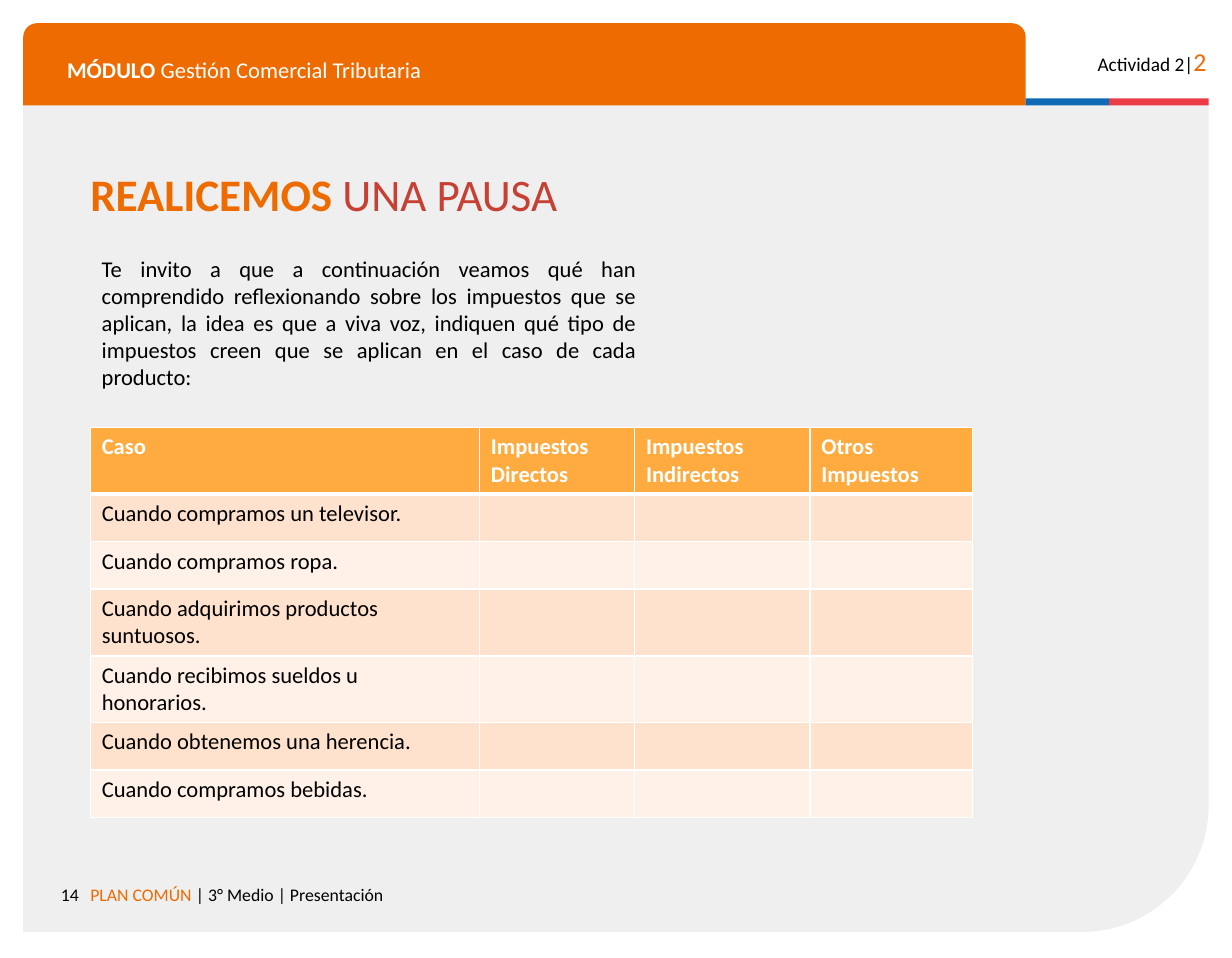
from dataclasses import dataclass

import lxml.etree
import pptx
import pptx.dml.color
import pptx.enum.shapes
import pptx.enum.text
import pptx.oxml.ns
import pptx.util

Cm = pptx.util.Cm
Preset = pptx.enum.shapes.MSO_SHAPE
Align = pptx.enum.text.PP_ALIGN
Anchor = pptx.enum.text.MSO_ANCHOR


@dataclass(frozen=True)
class Theme:
    font: str = "Calibri"
    orange: str = "ED6B00"
    blue: str = "0F69B4"
    red: str = "EB3C46"
    brick: str = "C64033"
    panel: str = "EFEFEF"
    table_header: str = "FFAB40"
    bands: tuple[str, str] = ("FFE2CD", "FFF1E8")
    black: str = "000000"
    white: str = "FFFFFF"
    title_size: int = 28
    accent_size: int = 16
    body_size: int = 14
    label_size: int = 12
    footer_size: int = 11


@dataclass(frozen=True)
class Box:
    left: float
    top: float
    width: float
    height: float

    def lengths(self) -> tuple[int, int, int, int]:
        return Cm(self.left), Cm(self.top), Cm(self.width), Cm(self.height)


@dataclass(frozen=True)
class Block:
    box: Box
    preset: int
    color: str
    adjustments: tuple[float, ...] = ()
    flipped: bool = False


@dataclass(frozen=True)
class Run:
    text: str
    size: int
    color: str
    bold: bool = False


@dataclass(frozen=True)
class Label:
    box: Box
    runs: tuple[Run, ...]
    alignment: int = Align.LEFT
    vertical_margin: float = 0.25


THEME = Theme()

BLOCKS = (
    Block(Box(0.51, 2.29, 25.98, 18.14), Preset.ROUND_1_RECTANGLE, THEME.panel, (0.153,), True),
    Block(Box(0.51, 0.51, 21.97, 1.8), Preset.ROUND_2_SAME_RECTANGLE, THEME.orange, (0.167, 0)),
    Block(Box(22.48, 2.16, 1.83, 0.15), Preset.RECTANGLE, THEME.blue),
    Block(Box(24.31, 2.16, 2.18, 0.15), Preset.RECTANGLE, THEME.red),
)

TITLE = Label(
    Box(1.73, 3.91, 24.87, 0.89),
    (
        Run("REALICEMOS ", THEME.title_size, THEME.orange, True),
        Run("UNA PAUSA", THEME.title_size, THEME.brick),
    ),
)

LABELS = (
    Label(
        Box(1.22, 0.97, 20.68, 0.89),
        (
            Run("MÓDULO", THEME.body_size, THEME.white, True),
            Run(" Gestión Comercial Tributaria", THEME.body_size, THEME.white),
        ),
    ),
    Label(
        Box(23.44, 0.76, 3.25, 0.97),
        (
            Run("Actividad 2|", THEME.label_size, THEME.black),
            Run("2", THEME.accent_size, THEME.orange),
        ),
        Align.RIGHT,
    ),
    Label(Box(0.51, 19.13, 1.47, 0.74), (Run("14", THEME.footer_size, THEME.black),), Align.RIGHT),
    Label(
        Box(1.73, 19.13, 18.16, 0.97),
        (
            Run("PLAN COMÚN ", THEME.footer_size, THEME.orange),
            Run("| 3° Medio | Presentación", THEME.footer_size, THEME.black),
        ),
    ),
    Label(
        Box(1.98, 5.46, 12.22, 3.25),
        (
            Run(
                "Te invito a que a continuación veamos qué han comprendido reflexionando "
                "sobre los impuestos que se aplican, la idea es que a viva voz, indiquen qué "
                "tipo de impuestos creen que se aplican en el caso de cada producto:",
                THEME.body_size,
                THEME.black,
            ),
        ),
        Align.JUSTIFY,
        0.13,
    ),
)

TABLE_LEFT, TABLE_TOP = 1.98, 9.37
COLUMN_WIDTHS = (8.53, 3.4, 3.84, 3.56)
ROW_HEIGHTS = (1.42, 1.04, 1.04, 1.45, 1.45, 1.04, 1.04)
HEADERS = ("Caso", "Impuestos Directos", "Impuestos\nIndirectos", "Otros Impuestos")
CASES = (
    "Cuando compramos un televisor.",
    "Cuando compramos ropa.",
    "Cuando adquirimos productos suntuosos.",
    "Cuando recibimos sueldos u honorarios.",
    "Cuando obtenemos una herencia.",
    "Cuando compramos bebidas.",
)


def rgb(color: str) -> pptx.dml.color.RGBColor:
    return pptx.dml.color.RGBColor.from_string(color)


def add_run(paragraph, text: str, *, size: int, color: str, bold: bool = False) -> None:
    run = paragraph.add_run()
    run.text = text
    run.font.name = THEME.font
    run.font.size = pptx.util.Pt(size)
    run.font.bold = bold
    run.font.color.rgb = rgb(color)


def add_block(slide, block: Block) -> None:
    shape = slide.shapes.add_shape(block.preset, *block.box.lengths())
    shape.shadow.inherit = False
    shape.fill.solid()
    shape.fill.fore_color.rgb = rgb(block.color)
    shape.line.fill.background()
    for index, value in enumerate(block.adjustments):
        shape.adjustments[index] = value
    if block.flipped:
        shape.element.spPr.xfrm.set("flipV", "1")


def fill_label(shape, label: Label, anchor: int = Anchor.TOP) -> None:
    shape.left, shape.top, shape.width, shape.height = label.box.lengths()
    frame = shape.text_frame
    frame.word_wrap = True
    frame.auto_size = pptx.enum.text.MSO_AUTO_SIZE.NONE
    frame.vertical_anchor = anchor
    frame.margin_left = frame.margin_right = Cm(0.25)
    frame.margin_top = frame.margin_bottom = Cm(label.vertical_margin)
    paragraph = frame.paragraphs[0]
    paragraph.alignment = label.alignment
    for run in label.runs:
        add_run(paragraph, run.text, size=run.size, color=run.color, bold=run.bold)


def set_border(cell, side: str, width: float) -> None:
    properties = cell._tc.get_or_add_tcPr()
    line = lxml.etree.SubElement(properties, pptx.oxml.ns.qn(f"a:ln{side}"), w=str(pptx.util.Pt(width)))
    fill = lxml.etree.SubElement(line, pptx.oxml.ns.qn("a:solidFill"))
    lxml.etree.SubElement(fill, pptx.oxml.ns.qn("a:srgbClr"), val=THEME.white)


def fill_cell(cell, text: str, row: int) -> None:
    header = row == 0
    for side in "LRTB":
        header_rule = (row, side) in ((0, "B"), (1, "T"))
        set_border(cell, side, 3 if header_rule else 1)
    cell.fill.solid()
    cell.fill.fore_color.rgb = rgb(THEME.table_header if header else THEME.bands[(row - 1) % 2])
    cell.margin_left = cell.margin_right = Cm(0.25)
    cell.margin_top = cell.margin_bottom = Cm(0.13)
    if not text:
        return
    frame = cell.text_frame
    for index, line in enumerate(text.split("\n")):
        paragraph = frame.add_paragraph() if index else frame.paragraphs[0]
        color = THEME.white if header else THEME.black
        add_run(paragraph, line, size=THEME.body_size, color=color, bold=header)


def add_tax_table(slide) -> None:
    rows = (HEADERS, *((case, "", "", "") for case in CASES))
    box = Box(TABLE_LEFT, TABLE_TOP, sum(COLUMN_WIDTHS), sum(ROW_HEIGHTS))
    table = slide.shapes.add_table(len(rows), len(HEADERS), *box.lengths()).table
    for column, width in zip(table.columns, COLUMN_WIDTHS):
        column.width = Cm(width)
    for row_index, (texts, height) in enumerate(zip(rows, ROW_HEIGHTS)):
        table.rows[row_index].height = Cm(height)
        for column_index, text in enumerate(texts):
            fill_cell(table.cell(row_index, column_index), text, row_index)


def main() -> None:
    presentation = pptx.Presentation()
    presentation.slide_width, presentation.slide_height = Cm(27), Cm(21)
    slide = presentation.slides.add_slide(presentation.slide_layouts[5])
    for block in BLOCKS:
        add_block(slide, block)
    title = slide.shapes.title
    slide.shapes._spTree.append(title.element)
    fill_label(title, TITLE, Anchor.MIDDLE)
    title.text_frame.paragraphs[0].line_spacing = 0.8
    for label in LABELS:
        fill_label(slide.shapes.add_textbox(*label.box.lengths()), label)
    add_tax_table(slide)
    presentation.save("out.pptx")


if __name__ == "__main__":
    main()
